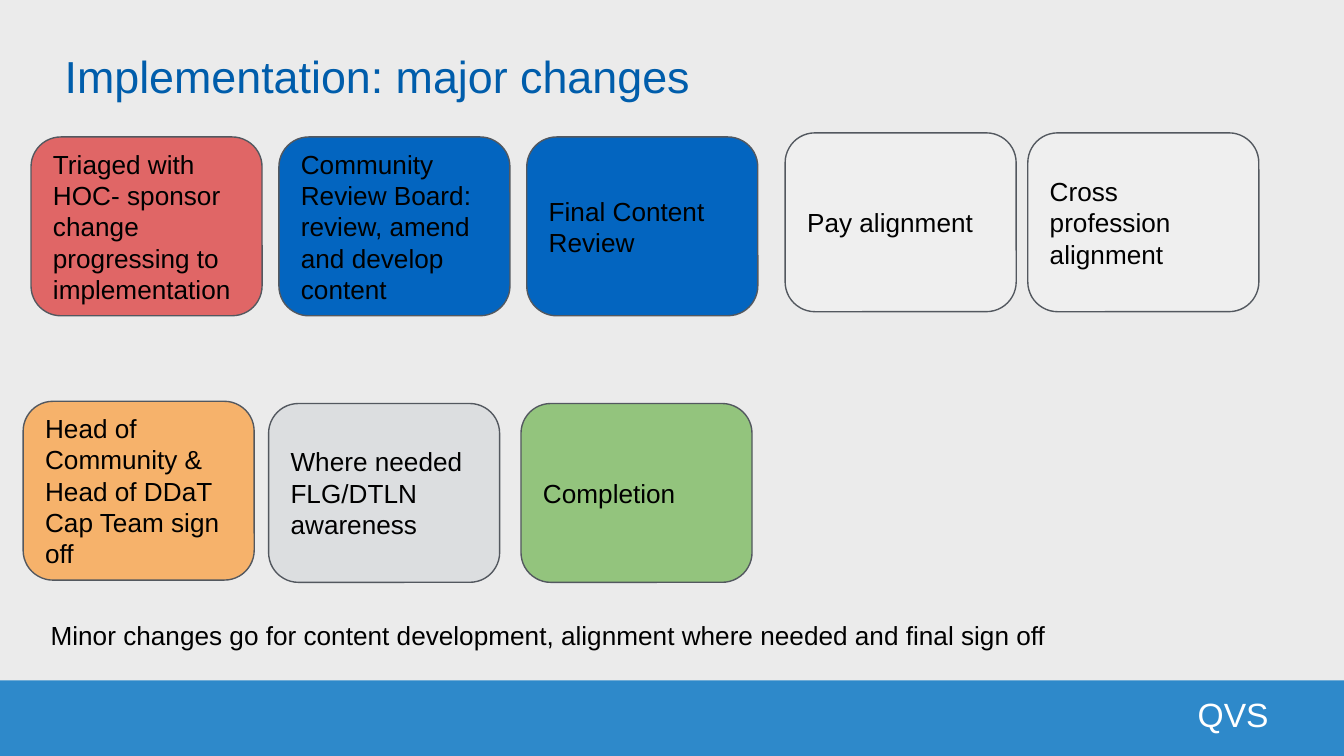
import pptx
import pptx.util
import pptx.dml.color
import pptx.enum.shapes
import pptx.enum.text

Pt = pptx.util.Pt
RGBColor = pptx.dml.color.RGBColor
SHAPES = pptx.enum.shapes.MSO_SHAPE
ANCHOR = pptx.enum.text.MSO_ANCHOR
ALIGN = pptx.enum.text.PP_ALIGN

BACKGROUND = RGBColor(0xEB, 0xEB, 0xEB)
FOOTER_BLUE = RGBColor(0x2E, 0x89, 0xCA)
TITLE_BLUE = RGBColor(0x00, 0x5D, 0xAB)
OUTLINE = RGBColor(0x53, 0x58, 0x5F)
BLACK = RGBColor(0x00, 0x00, 0x00)
WHITE = RGBColor(0xFF, 0xFF, 0xFF)
RED = RGBColor(0xE0, 0x66, 0x66)
BLUE = RGBColor(0x03, 0x65, 0xC0)
PALE = RGBColor(0xEF, 0xEF, 0xEF)
ORANGE = RGBColor(0xF6, 0xB2, 0x6B)
GREY = RGBColor(0xDC, 0xDE, 0xE0)
GREEN = RGBColor(0x93, 0xC4, 0x7D)

# Content
TITLE = "Implementation: major changes"
NOTE = "Minor changes go for content development, alignment where needed and final sign off"
FOOTER = "QVS"

# Groups of evenly spaced steps: left, top, pitch, (text, fill) pairs
STEP_GROUPS = [
    (16.6, 73.4, 132.8, [
        ("Triaged with HOC- sponsor change progressing to implementation", RED),
        ("Community Review Board: review, amend and develop content", BLUE),
        ("Final Content Review", BLUE),
    ]),
    (420.6, 71.2, 130, [
        ("Pay alignment", PALE),
        ("Cross profession alignment", PALE),
    ]),
    (12.4, 215, 0, [("Head of Community & Head of DDaT Cap Team sign off", ORANGE)]),
    (143.9, 216.2, 135.2, [
        ("Where needed FLG/DTLN awareness", GREY),
        ("Completion", GREEN),
    ]),
]

# Layout
SLIDE_WIDTH, SLIDE_HEIGHT = 720, 405
FOOTER_TOP = 364.5
STEP_WIDTH, STEP_HEIGHT = 123.8, 95.8


def write_text(shape, text, size, color, margins, anchor=ANCHOR.TOP,
               align=ALIGN.LEFT):
    frame = shape.text_frame
    frame.word_wrap = True
    frame.vertical_anchor = anchor
    frame.margin_left = frame.margin_right = Pt(margins[0])
    frame.margin_top = frame.margin_bottom = Pt(margins[1])
    frame.text = text
    paragraph = frame.paragraphs[0]
    paragraph.alignment = align
    paragraph.font.name = "Arial"
    paragraph.font.size = Pt(size)
    paragraph.font.color.rgb = color


def add_filled_shape(slide, kind, left, top, width, height, fill):
    shape = slide.shapes.add_shape(kind, Pt(left), Pt(top), Pt(width), Pt(height))
    shape.shadow.inherit = False
    shape.fill.solid()
    shape.fill.fore_color.rgb = fill
    return shape


def add_step(slide, left, top, text, fill):
    step = add_filled_shape(slide, SHAPES.ROUNDED_RECTANGLE, left, top,
                            STEP_WIDTH, STEP_HEIGHT, fill)
    step.adjustments[0] = 0.167
    step.line.color.rgb = OUTLINE
    step.line.width = Pt(0.75)
    write_text(step, text, 14, BLACK, (7.2, 7.2), ANCHOR.MIDDLE)


def main():
    presentation = pptx.Presentation()
    presentation.slide_width = Pt(SLIDE_WIDTH)
    presentation.slide_height = Pt(SLIDE_HEIGHT)
    slide = presentation.slides.add_slide(presentation.slide_layouts[5])
    slide.background.fill.solid()
    slide.background.fill.fore_color.rgb = BACKGROUND

    # Title
    title = slide.shapes.title
    title.left, title.top = Pt(27.4), Pt(22.3)
    title.width, title.height = Pt(434), Pt(36)
    write_text(title, TITLE, 24, TITLE_BLUE, (7.2, 3.6))

    # Footer band
    band = add_filled_shape(slide, SHAPES.RECTANGLE, 0, FOOTER_TOP, SLIDE_WIDTH,
                            SLIDE_HEIGHT - FOOTER_TOP, FOOTER_BLUE)
    band.line.fill.background()
    label = slide.shapes.add_textbox(Pt(465), Pt(371.5), Pt(214.6), Pt(22.3))
    write_text(label, FOOTER, 18, WHITE, (0, 0), ANCHOR.MIDDLE, ALIGN.RIGHT)

    # Process steps
    for left, top, pitch, steps in STEP_GROUPS:
        for index, (text, fill) in enumerate(steps):
            add_step(slide, left + index * pitch, top, text, fill)

    # Note on minor changes
    note = slide.shapes.add_textbox(Pt(20), Pt(324.7), Pt(625.7), Pt(33.8))
    write_text(note, NOTE, 14, BLACK, (7.2, 7.2))

    presentation.save("out.pptx")


if __name__ == "__main__":
    main()
